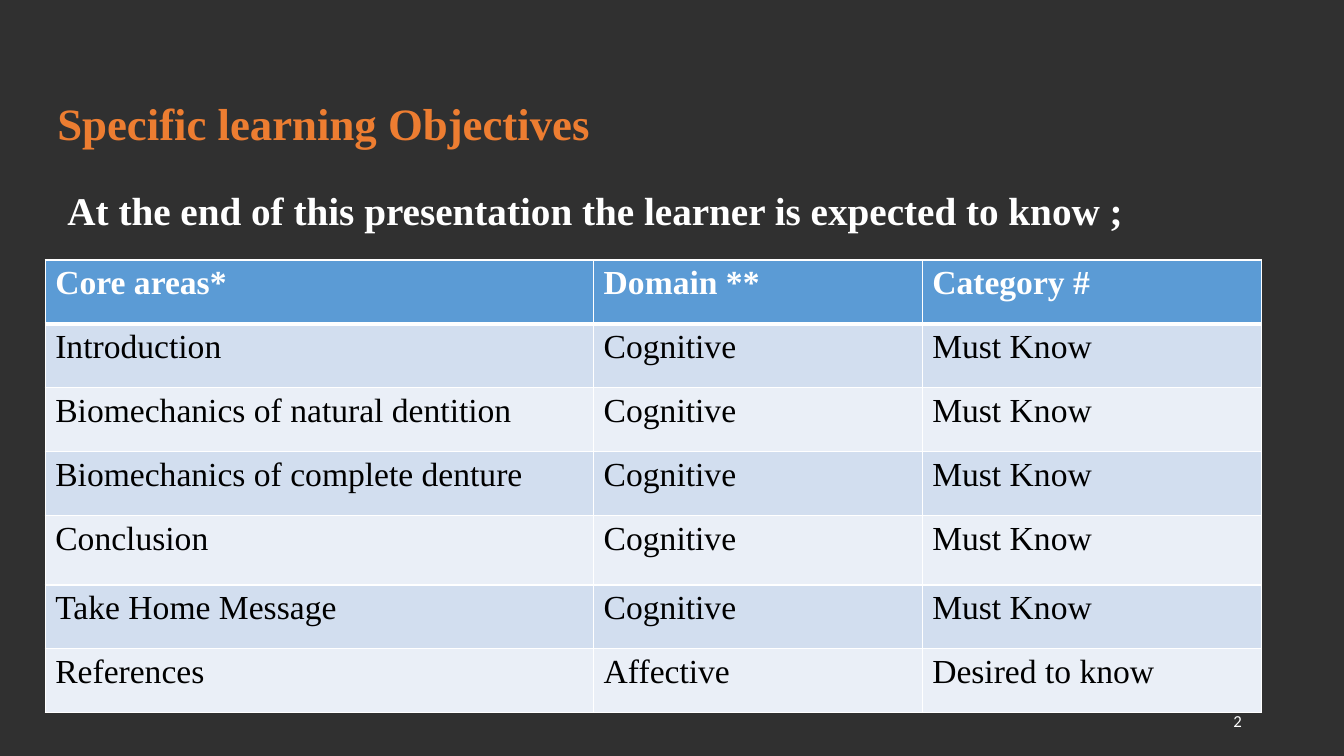
from dataclasses import dataclass

from lxml import etree
from pptx import Presentation
from pptx import util as u
from pptx.dml.color import RGBColor
from pptx.enum import text
from pptx.oxml import ns


@dataclass(frozen=True)
class Theme:
    background: str = "303030"
    accent: str = "ED7D31"
    light: str = "FFFFFF"
    dark: str = "000000"
    header: str = "5B9BD5"
    bands: tuple = ("D2DEEF", "EAEFF7")
    serif: str = "Times New Roman"
    sans: str = "Calibri"
    title_size: int = 32
    lead_size: int = 28
    table_size: int = 24
    number_size: int = 12
    thin: int = 1
    thick: int = 3


def write(tf, content, *, size, color, font, bold=False,
          align=text.PP_ALIGN.LEFT, anchor=None, spacing=None):
    """Put one formatted paragraph into a text frame."""
    p = tf.paragraphs[0]
    p.alignment = align
    if spacing:
        p.line_spacing = spacing
    if anchor is not None:
        tf.vertical_anchor = anchor
    r = p.add_run()
    r.text = content
    r.font.size, r.font.name, r.font.bold = u.Pt(size), font, bold
    r.font.color.rgb = RGBColor.from_string(color)


class SlideBuilder:
    def __init__(self, prs, theme):
        self.theme = theme
        self.s = prs.slides.add_slide(prs.slide_layouts[5])
        fill = self.s.background.fill
        fill.solid()
        fill.fore_color.rgb = RGBColor.from_string(theme.background)

    def title(self, content, left, top, width, height):
        sp = self.s.shapes.title
        sp.left, sp.top, sp.width, sp.height = map(u.Cm, (left, top, width, height))
        write(sp.text_frame, content, size=self.theme.title_size,
              color=self.theme.accent, font=self.theme.serif, bold=True,
              anchor=text.MSO_ANCHOR.MIDDLE, spacing=0.9)

    def textbox(self, content, left, top, width, height, **style):
        sp = self.s.shapes.add_textbox(*map(u.Cm, (left, top, width, height)))
        sp.text_frame.word_wrap = True
        write(sp.text_frame, content, **style)

    def border(self, cell, **widths):
        tc_pr = cell._tc.get_or_add_tcPr()
        for side, points in widths.items():
            ln = etree.SubElement(tc_pr, ns.qn(f"a:ln{side}"), w=str(u.Pt(points)))
            fill = etree.SubElement(ln, ns.qn("a:solidFill"))
            etree.SubElement(fill, ns.qn("a:srgbClr"), val=self.theme.light)

    def table(self, rows, left, top, col_widths, row_heights):
        t = self.theme
        size = (sum(col_widths), sum(row_heights))
        table = self.s.shapes.add_table(
            len(rows), len(col_widths), *map(u.Cm, (left, top, *size))).table
        for column, width in zip(table.columns, col_widths):
            column.width = u.Cm(width)
        for i, (row, height) in enumerate(zip(rows, row_heights)):
            table.rows[i].height = u.Cm(height)
            is_header = i == 0
            color = t.header if is_header else t.bands[(i - 1) % 2]
            for j, content in enumerate(row):
                cell = table.cell(i, j)
                self.border(cell, L=t.thin, R=t.thin,
                            T=t.thick if i == 1 else t.thin,
                            B=t.thick if is_header else t.thin)
                cell.fill.solid()
                cell.fill.fore_color.rgb = RGBColor.from_string(color)
                write(cell.text_frame, content, size=t.table_size, font=t.serif,
                      color=t.light if is_header else t.dark, bold=is_header)


OBJECTIVES = [
    ("Core areas*", "Domain **", "Category #"),
    ("Introduction", "Cognitive", "Must Know"),
    ("Biomechanics of natural dentition", "Cognitive", "Must Know"),
    ("Biomechanics of complete denture", "Cognitive", "Must Know"),
    ("Conclusion", "Cognitive", "Must Know"),
    ("Take Home Message", "Cognitive", "Must Know"),
    ("References", "Affective", "Desired to know"),
]


def main():
    prs = Presentation()
    prs.slide_width, prs.slide_height = u.Cm(33.87), u.Cm(19.05)
    theme = Theme()
    slide = SlideBuilder(prs, theme)

    # Heading
    slide.title("Specific learning Objectives", 1.19, 2.08, 28.68, 2.18)

    # Slide number
    slide.textbox("2", 23.93, 17.65, 7.62, 1.02, size=theme.number_size,
                  color=theme.light, font=theme.sans,
                  align=text.PP_ALIGN.RIGHT, anchor=text.MSO_ANCHOR.MIDDLE)

    # Objectives table, with a slightly taller conclusion row
    heights = [1.75 if row[0] == "Conclusion" else 1.61 for row in OBJECTIVES]
    slide.table(OBJECTIVES, 1.14, 6.55, (13.82, 8.28, 8.56), heights)

    # Lead-in sentence
    slide.textbox("At the end of this presentation the learner is expected to know ;",
                  1.45, 4.57, 29.03, 1.45, size=theme.lead_size,
                  color=theme.light, font=theme.serif, bold=True)

    prs.save("out.pptx")


if __name__ == "__main__":
    main()
